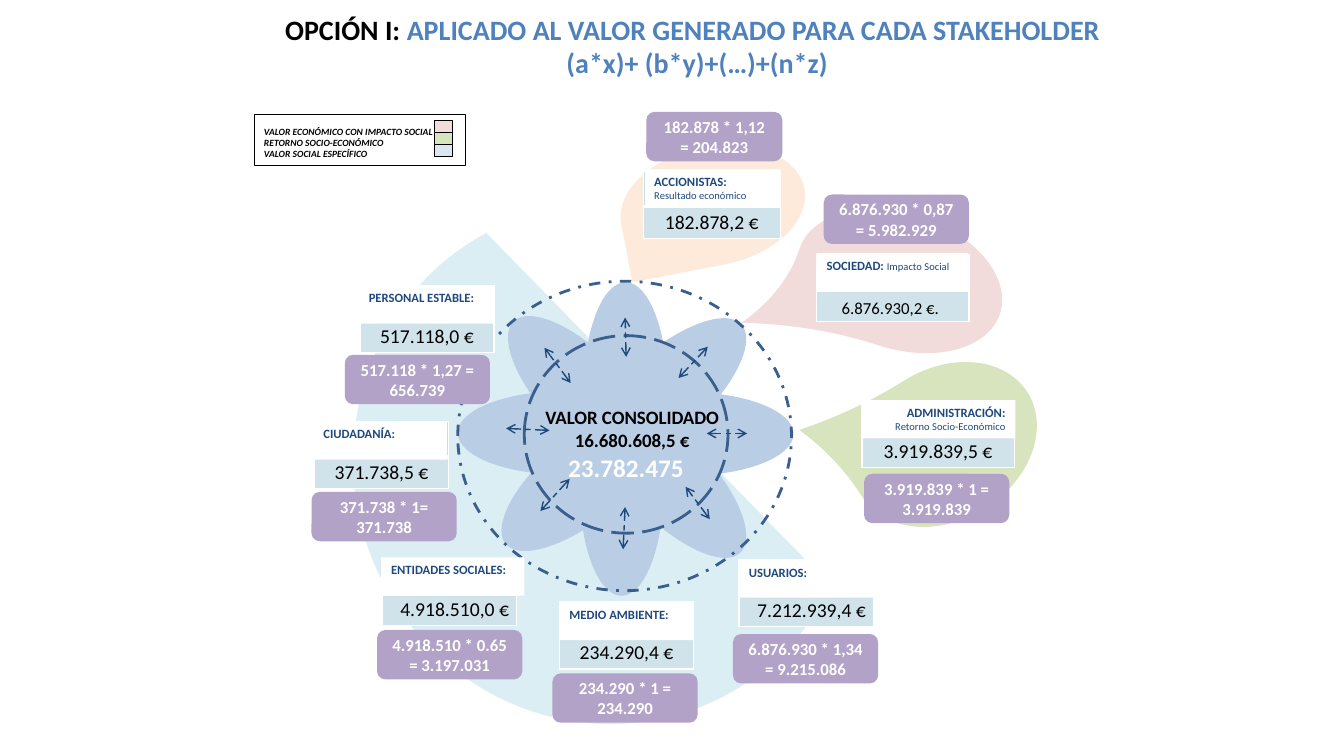
from lxml.etree import SubElement
from pptx import Presentation
from pptx.dml.color import RGBColor
from pptx.enum.dml import MSO_LINE as Dash
from pptx.enum.shapes import MSO_CONNECTOR, MSO_SHAPE as Shape
from pptx.enum.text import MSO_ANCHOR as Anchor, PP_ALIGN as Align
from pptx.oxml import parse_xml
from pptx.oxml.ns import nsdecls, qn
from pptx.util import Inches, Pt

WHITE = RGBColor(0xFF, 0xFF, 0xFF)
BLACK = RGBColor(0, 0, 0)
NAVY = RGBColor(0x1F, 0x49, 0x7D)
RING = RGBColor(0x3A, 0x5F, 0x8C)
TITLE_BLUE = RGBColor(0x4F, 0x81, 0xBD)
PETAL = RGBColor(0xB9, 0xCD, 0xE5)
AQUA = RGBColor(0xDB, 0xEE, 0xF4)
PINK = RGBColor(0xF2, 0xDC, 0xDB)
GREEN = RGBColor(0xD7, 0xE4, 0xBD)
PEACH = RGBColor(0xFD, 0xEA, 0xDA)
PALE_BLUE = RGBColor(0xDC, 0xE6, 0xF2)
PURPLE = RGBColor(0xB3, 0xA2, 0xC7)
TEAL = RGBColor(0x4B, 0xAC, 0xC6)
CELL = RGBColor(0xD0, 0xE3, 0xEA)
FONT = "Calibri"

# left, top, rotation of each petal
PETALS = [(4.77, 4.3, 320.3), (5.54, 4.3, 46.1), (5.14, 3.45, 270), (4.54, 3.88, 0),
          (5.5, 3.52, 317.8), (5.74, 3.89, 0), (4.77, 3.54, 46.1), (5.1, 4.43, 270)]

# from x, y, to x, y of each arrow
ARROWS = [(6.21, 3.54, 6.2, 3.15), (5.45, 4.27, 5.02, 4.25), (5.66, 3.8, 5.4, 3.45),
          (6.73, 3.75, 7.02, 3.44), (5.36, 5.07, 5.65, 4.75), (7.01, 4.3, 7.41, 4.3),
          (7.04, 5.15, 6.8, 4.83), (6.18, 5.45, 6.2, 5.03)]

# table box, label box, label, detail, label alignment, value, value alignment
CARDS = [
    ((8.1, 2.53, 1.51), (8.1, 2.51, 1.5), "SOCIEDAD: ", "Impacto Social", Align.JUSTIFY, "", Align.CENTER),
    ((8.55, 3.97, 1.51), (8.55, 3.97, 1.52), "ADMINISTRACIÓN: ", "Retorno Socio-Económico",
     Align.RIGHT, "3.919.839,5 €", Align.CENTER),
    ((7.33, 5.55, 1.33), (7.33, 5.55, 1.33), "USUARIOS:", "", Align.LEFT, "7.212.939,4 €", Align.RIGHT),
    ((6.38, 1.7, 1.36), (6.39, 1.68, 1.35), "ACCIONISTAS: ", "Resultado económico",
     Align.JUSTIFY, "182.878,2 €", Align.CENTER),
    ((5.55, 5.97, 1.33), (5.55, 5.97, 1.33), "MEDIO AMBIENTE:", "", Align.LEFT, "234.290,4 €", Align.CENTER),
    ((3.79, 5.54, 1.33), (3.78, 5.53, 1.42), "ENTIDADES SOCIALES:", "", Align.LEFT, "4.918.510,0 €", Align.RIGHT),
    ((3.12, 4.18, 1.33), (3.11, 4.18, 1.33), "CIUDADANÍA:", "", Align.LEFT, "371.738,5 €", Align.CENTER),
    ((3.57, 2.83, 1.33), (3.56, 2.83, 1.33), "PERSONAL ESTABLE:", "", Align.LEFT, "517.118,0 €", Align.CENTER),
]

# left, top, width, calculation
BADGES = [
    (6.41, 1.11, 1.35, "182.878 * 1,12 = 204.823"),
    (8.17, 1.93, 1.44, "6.876.930 * 0,87 = 5.982.929"),
    (8.57, 4.7, 1.44, "3.919.839 * 1 = 3.919.839"),
    (7.27, 6.29, 1.44, "6.876.930 * 1,34 = 9.215.086"),
    (5.48, 6.68, 1.44, "234.290 * 1 = 234.290"),
    (3.74, 6.25, 1.44, "4.918.510 * 0.65 = 3.197.031"),
    (3.09, 4.88, 1.44, "371.738 * 1= 371.738"),
    (3.42, 3.52, 1.44, "517.118 * 1,27 = 656.739"),
]


def add_text(p, text, size=12, color=BLACK, bold=False, italic=False, align=None):
    if align is not None:
        p.alignment = align
    r = p.add_run()
    r.text = text
    r.font.name, r.font.size = FONT, Pt(size)
    r.font.bold, r.font.italic = bold, italic
    r.font.color.rgb = color


def add_box(s, box, anchor=Anchor.TOP):
    tf = s.shapes.add_textbox(*map(Inches, box)).text_frame
    tf.word_wrap, tf.vertical_anchor = True, anchor
    return tf


def add_figure(s, kind, box, fill=None, line=None, width=0.75, dash=None, rot=0, flip="", adj=()):
    sp = s.shapes.add_shape(kind, *map(Inches, box))
    sp.shadow.inherit = False
    sp.rotation = rot
    for i, value in enumerate(adj):
        sp.adjustments[i] = value
    for axis in flip:
        sp._element.spPr.find(qn("a:xfrm")).set("flip" + axis, "1")
    if fill is None:
        sp.fill.background()
    else:
        sp.fill.solid()
        sp.fill.fore_color.rgb = fill
    if line is None:
        sp.line.fill.background()
    else:
        sp.line.color.rgb, sp.line.width = line, Pt(width)
        if dash:
            sp.line.dash_style = dash
    tf = sp.text_frame
    tf.word_wrap, tf.vertical_anchor = True, Anchor.TOP
    tf.paragraphs[0].alignment = Align.LEFT
    return sp


def add_arrow(s, x1, y1, x2, y2):
    c = s.shapes.add_connector(MSO_CONNECTOR.STRAIGHT, *map(Inches, (x1, y1, x2, y2)))
    c.line.color.rgb, c.line.width = NAVY, Pt(1)
    c.line.dash_style = Dash.DASH
    for end in ("a:headEnd", "a:tailEnd"):
        SubElement(c.line._get_or_add_ln(), qn(end), type="arrow")
    SubElement(c._element.spPr, qn("a:effectLst"))


def style_cell(cell, fill, bottom):
    cell.fill.solid()
    cell.fill.fore_color.rgb = fill
    cell.margin_left = cell.margin_right = Inches(0.07)
    cell.margin_top = cell.margin_bottom = Inches(0.04)
    for i, (side, width) in enumerate(zip("LRTB", (1, 1, 1, bottom))):
        cell._tc.tcPr.insert(i, parse_xml(
            f'<a:ln{side} {nsdecls("a")} w="{Pt(width)}"><a:solidFill>'
            f'<a:srgbClr val="{WHITE}"/></a:solidFill></a:ln{side}>'))


def add_card(s, table_box, label_box, label, detail, label_align, value, value_align):
    # Value table
    table = s.shapes.add_table(2, 1, *map(Inches, (*table_box, 0.66))).table
    table.first_row = table.horz_banding = False
    for row, height, fill, bottom in zip(range(2), (0.35, 0.31), (TEAL, CELL), (3, 1)):
        table.rows[row].height = Inches(height)
        style_cell(table.cell(row, 0), fill, bottom)
        p = table.cell(row, 0).text_frame.paragraphs[0]
        if row and value:
            add_text(p, value, size=14, align=value_align)
        else:
            SubElement(p._p, qn("a:endParaRPr"), sz="900")
    # Label over the first row
    sp = add_figure(s, Shape.RECTANGLE, (*label_box, 0.38), WHITE)
    p = sp.text_frame.paragraphs[0]
    add_text(p, label, size=9, color=NAVY, bold=True, align=label_align)
    if detail:
        add_text(p, detail, size=7.5, color=NAVY)


def add_badge(s, left, top, width, text):
    sp = add_figure(s, Shape.ROUNDED_RECTANGLE, (left, top, width, 0.49), PURPLE)
    sp.text_frame.vertical_anchor = Anchor.MIDDLE
    add_text(sp.text_frame.paragraphs[0], text, color=WHITE, bold=True, align=Align.CENTER)


def add_legend(s):
    sp = add_figure(s, Shape.RECTANGLE, (2.52, 1.14, 2.1, 0.5), WHITE, BLACK)
    tf = sp.text_frame
    tf.paragraphs[0].line_spacing = 1.5
    for i, (text, fill) in enumerate([("VALOR ECONÓMICO CON IMPACTO SOCIAL", PINK),
                                      ("RETORNO SOCIO-ECONÓMICO", GREEN),
                                      ("VALOR SOCIAL ESPECÍFICO", PALE_BLUE)]):
        p = tf.add_paragraph() if i else tf.paragraphs[0]
        add_text(p, text, size=6.8, bold=True, italic=True, align=Align.LEFT)
        add_figure(s, Shape.RECTANGLE, (4.31, 1.2 + 0.115 * i, 0.18, 0.12), fill, BLACK)


def main():
    prs = Presentation()
    prs.slide_width, prs.slide_height = Inches(13.33), Inches(7.5)
    s = prs.slides.add_slide(prs.slide_layouts[6])

    # Coloured areas behind the stakeholders
    add_figure(s, Shape.TEAR, (7.88, 2.12, 2.09, 1.34), PINK, rot=17.9, flip="HV", adj=[1.307])
    add_figure(s, Shape.CHORD, (3.51, 2.02, 5, 5.17), AQUA, rot=343.4, adj=[27, 155.561])
    add_figure(s, Shape.TEAR, (8.4, 3.66, 1.94, 1.5), GREEN, rot=328, flip="H", adj=[1.182])
    add_figure(s, Shape.TEAR, (6.48, 1.12, 1.18, 1.85), PEACH, rot=79.1, flip="V", adj=[1])

    # Flower, rings and arrows
    for left, top, rot in PETALS:
        add_figure(s, Shape.OVAL, (left, top, 2.13, 0.83), PETAL, rot=rot)
    add_figure(s, Shape.OVAL, (4.54, 2.79, 3.31, 3.07), line=RING, width=2, dash=Dash.DASH_DOT)
    add_figure(s, Shape.OVAL, (5.2, 3.33, 2.02, 1.96), line=RING, width=2, dash=Dash.LONG_DASH)
    for arrow in ARROWS:
        add_arrow(s, *arrow)

    # Stakeholder cards
    for card in CARDS:
        add_card(s, *card)
    add_text(add_box(s, (8.25, 2.9, 1.25, 0.3)).paragraphs[0], "6.876.930,2 €.")
    add_legend(s)

    # Consolidated value
    tf = add_box(s, (3.77, 3.98, 5, 0.56))
    add_text(tf.paragraphs[0], "VALOR CONSOLIDADO", size=13.5, bold=True, align=Align.CENTER)
    add_text(tf.add_paragraph(), "16.680.608,5 €", size=13.5, bold=True, align=Align.CENTER)

    # Title
    p = add_box(s, (2.73, 0.07, 8.37, 0.77)).paragraphs[0]
    add_text(p, "OPCIÓN I: ", size=20, bold=True, align=Align.CENTER)
    add_text(p, "APLICADO AL VALOR GENERADO PARA CADA STAKEHOLDER \t(a*x)+ (b*y)+(…)+(n*z)",
             size=20, color=TITLE_BLUE, bold=True)

    # Weighted results
    for badge in BADGES:
        add_badge(s, *badge)
    add_text(add_box(s, (5.43, 4.44, 1.56, 0.4)).paragraphs[0], "23.782.475",
             size=18, color=WHITE, bold=True, align=Align.CENTER)

    prs.save("out.pptx")


if __name__ == "__main__":
    main()
